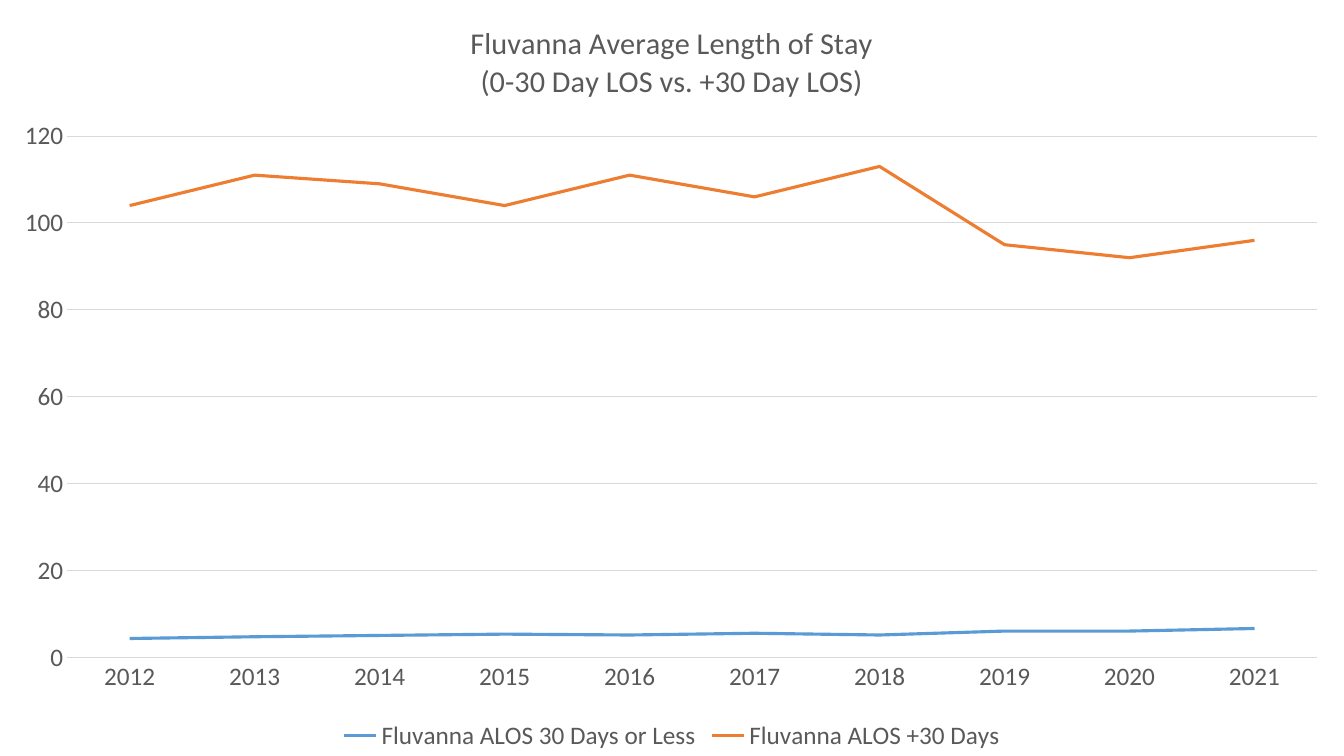
"""Build a slide with a line chart of average length of stay at Fluvanna."""
from lxml.etree import SubElement
from pptx import Presentation
from pptx.chart.data import CategoryChartData
from pptx.dml.color import RGBColor
from pptx.enum.chart import XL_CHART_TYPE as ChartType
from pptx.enum.chart import XL_LEGEND_POSITION as LegendPosition
from pptx.enum.chart import XL_TICK_MARK as TickMark
from pptx.oxml.ns import qn
from pptx.util import Pt

TITLE_LINES = ["Fluvanna Average Length of Stay", "(0-30 Day LOS vs. +30 Day LOS)"]
YEARS = [str(year) for year in range(2012, 2022)]
BLUE = RGBColor(0x5B, 0x9B, 0xD5)
ORANGE = RGBColor(0xED, 0x7D, 0x31)
GRAY = RGBColor(0x59, 0x59, 0x59)
LIGHT_GRAY = RGBColor(0xD9, 0xD9, 0xD9)
STAYS = [
    ("Fluvanna ALOS 30 Days or Less", BLUE, [4.4, 4.8, 5.1, 5.4, 5.2, 5.6, 5.2, 6.1, 6.1, 6.7]),
    ("Fluvanna ALOS +30 Days", ORANGE, [104, 111, 109, 104, 111, 106, 113, 95, 92, 96]),
]
FONT = "Calibri"
WIDTH, HEIGHT = Pt(960), Pt(540)
PLOT_LAYOUT = {"x": 0.05, "y": 0.18, "w": 0.93, "h": 0.69}


def style_font(font, size):
    font.name = FONT
    font.size = Pt(size)
    font.bold = False
    font.color.rgb = GRAY


def style_line(line, color, width):
    line.color.rgb = color
    line.width = Pt(width)


def add_title(chart):
    chart.has_title = True
    chart.chart_title.include_in_layout = False
    frame = chart.chart_title.text_frame
    for index, text in enumerate(TITLE_LINES):
        paragraph = frame.add_paragraph() if index else frame.paragraphs[0]
        style_font(paragraph.font, 21.6)
        run = paragraph.add_run()
        run.text = text
        style_font(run.font, 21.6)


def style_axes(chart):
    for axis in (chart.category_axis, chart.value_axis):
        axis.major_tick_mark = axis.minor_tick_mark = TickMark.NONE
        style_font(axis.tick_labels.font, 18)
    style_line(chart.category_axis.format.line, LIGHT_GRAY, 0.75)
    values = chart.value_axis
    values.minimum_scale, values.maximum_scale, values.major_unit = 0, 120, 20
    values.tick_labels.number_format = "0"
    values.tick_labels.number_format_is_linked = False
    values.format.line.fill.background()
    style_line(values.major_gridlines.format.line, LIGHT_GRAY, 0.75)


def place_plot(chart):
    plot_area = chart.plots[0]._element.getparent()
    layout = plot_area.find(qn("c:layout"))
    if layout is None:
        layout = SubElement(plot_area, qn("c:layout"))
        plot_area.insert(0, layout)
    manual = SubElement(layout, qn("c:manualLayout"))
    settings = {"layoutTarget": "inner", "xMode": "edge", "yMode": "edge", **PLOT_LAYOUT}
    for name, value in settings.items():
        SubElement(manual, qn(f"c:{name}")).set("val", str(value))


def add_stay_chart(slide):
    data = CategoryChartData()
    data.categories = YEARS
    for name, _, values in STAYS:
        data.add_series(name, values)
    chart = slide.shapes.add_chart(ChartType.LINE, 0, 0, WIDTH, HEIGHT, data).chart
    style_font(chart.font, 18)
    add_title(chart)
    style_axes(chart)
    chart.has_legend = True
    chart.legend.position = LegendPosition.BOTTOM
    chart.legend.include_in_layout = False
    style_font(chart.legend.font, 18)
    chart.plots[0].vary_by_categories = False
    for series, (_, color, _) in zip(chart.plots[0].series, STAYS):
        series.smooth = False
        style_line(series.format.line, color, 2.25)
    place_plot(chart)


def main():
    presentation = Presentation()
    presentation.slide_width, presentation.slide_height = WIDTH, HEIGHT
    slide = presentation.slides.add_slide(presentation.slide_layouts[6])
    add_stay_chart(slide)
    presentation.save("out.pptx")


if __name__ == "__main__":
    main()
